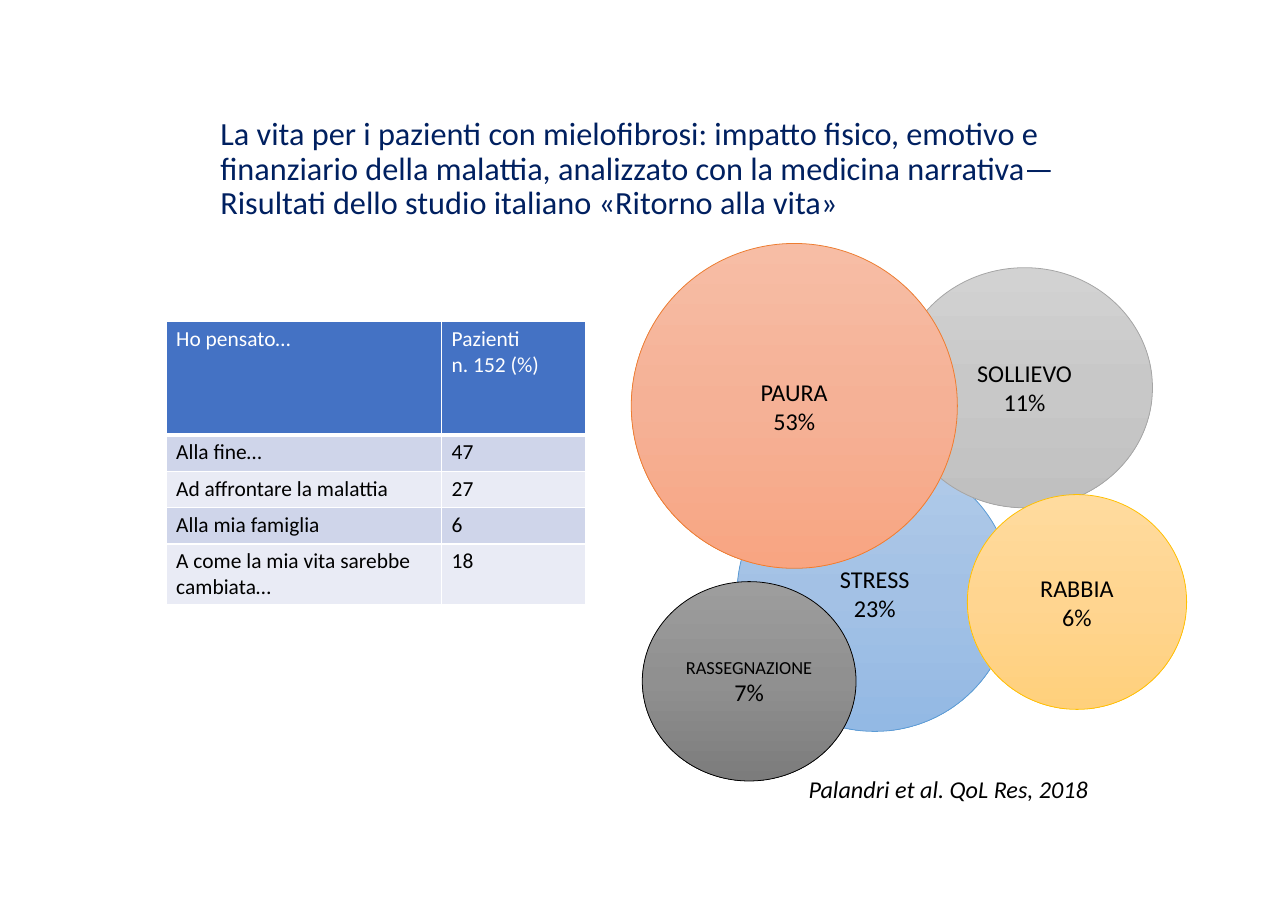
"""Build the slide on thoughts and emotions of patients with myelofibrosis."""
import copy
from typing import Any, NamedTuple

import pptx
import pptx.dml.color
import pptx.enum.shapes
import pptx.enum.text
import pptx.oxml
import pptx.oxml.ns
import pptx.util

Inches = pptx.util.Inches
Pt = pptx.util.Pt
FONT = "Calibri"
BODY_SIZE = 15.8
COLORS = {
    "title": "002060", "text": "000000", "white": "FFFFFF",
    "header": "4472C4", "odd": "CFD5EA", "even": "E9EBF5",
}


class Bubble(NamedTuple):
    """One emotion with its share, place and colours."""

    label: str
    share: str
    box: tuple[float, float, float, float]
    gradient: tuple[str, str, str]
    line: str
    label_size: float = BODY_SIZE


BUBBLES = [
    Bubble("STRESS", "23%", (6.69, 4.14, 2.5, 2.5), ("B1CBE9", "A3C1E5", "93B9E4"), "5B9BD5"),
    Bubble("SOLLIEVO", "11%", (8.14, 2.43, 2.32, 2.18), ("D2D2D2", "C8C8C8", "C0C0C0"), "A5A5A5"),
    Bubble("RABBIA", "6%", (8.78, 4.49, 1.99, 1.95), ("FFDB9E", "FFD590", "FFD07C"), "FFC000"),
    Bubble("PAURA", "53%", (5.73, 2.21, 2.96, 2.95), ("F7BDA5", "F5B196", "F8A582"), "ED7D31"),
    Bubble("RASSEGNAZIONE", "7%", (5.83, 5.28, 1.94, 1.81), ("9D9D9D", "909090", "7C7C7C"),
           "000000", 12),
]
ROWS = [
    ("Ho pensato…", "Pazienti\nn. 152 (%)"),
    ("Alla fine…", "47"),
    ("Ad affrontare la malattia", "27"),
    ("Alla mia famiglia", "6"),
    ("A come la mia vita sarebbe cambiata…", "18"),
]
COL_WIDTHS = (2.5, 1.31)
ROW_HEIGHTS = (1.03, 0.33, 0.33, 0.33, 0.55)


def rgb(value: str) -> pptx.dml.color.RGBColor:
    """Turn a hex string into a colour."""
    return pptx.dml.color.RGBColor.from_string(value)


def style(p: Any, size: float, color: str = COLORS["text"]) -> None:
    """Set the font of a paragraph."""
    p.font.name = FONT
    p.font.size = Pt(size)
    p.font.bold = False
    p.font.color.rgb = rgb(color)


def add_title(slide: Any, text: str) -> None:
    """Place and format the title placeholder."""
    s = slide.shapes.title
    s.left, s.top, s.width, s.height = map(Inches, (1.9, 0.99, 7.89, 1.1))
    tf = s.text_frame
    tf.text = text
    tf.word_wrap = True
    tf.auto_size = pptx.enum.text.MSO_AUTO_SIZE.NONE
    tf.vertical_anchor = pptx.enum.text.MSO_ANCHOR.MIDDLE
    p = tf.paragraphs[0]
    p.alignment = pptx.enum.text.PP_ALIGN.LEFT
    p.line_spacing = 0.9
    style(p, 21.1, COLORS["title"])


def add_citation(slide: Any, text: str) -> None:
    """Add the source line in italics."""
    tf = slide.shapes.add_textbox(*map(Inches, (7.24, 6.98, 2.76, 0.37))).text_frame
    tf.text = text
    tf.word_wrap = False
    tf.auto_size = pptx.enum.text.MSO_AUTO_SIZE.SHAPE_TO_FIT_TEXT
    style(tf.paragraphs[0], BODY_SIZE)
    tf.paragraphs[0].font.italic = True


def add_bubble(slide: Any, bubble: Bubble) -> None:
    """Draw one emotion as a circle with a vertical gradient."""
    s = slide.shapes.add_shape(pptx.enum.shapes.MSO_SHAPE.OVAL, *map(Inches, bubble.box))
    s.shadow.inherit = False
    s.fill.gradient()
    s.fill.gradient_angle = 270
    first = s._element.spPr.find(".//" + pptx.oxml.ns.qn("a:gs"))
    first.addnext(copy.deepcopy(first))
    for i, (stop, color) in enumerate(zip(s.fill.gradient_stops, bubble.gradient)):
        stop.position = i / 2
        stop.color.rgb = rgb(color)
    s.line.color.rgb = rgb(bubble.line)
    s.line.width = Pt(0.5)
    tf = s.text_frame
    tf.text = f"{bubble.label}\n{bubble.share}"
    tf.word_wrap = True
    tf.vertical_anchor = pptx.enum.text.MSO_ANCHOR.MIDDLE
    for p, size in zip(tf.paragraphs, (bubble.label_size, BODY_SIZE)):
        p.alignment = pptx.enum.text.PP_ALIGN.CENTER
        style(p, size)


def add_borders(cell: Any, bottom: float) -> None:
    """Give a cell white borders, with its own width below."""
    for side, width in (("L", 1), ("R", 1), ("T", 1), ("B", bottom)):
        cell._tc.get_or_add_tcPr().append(pptx.oxml.parse_xml(
            f'<a:ln{side} {pptx.oxml.ns.nsdecls("a")} w="{Pt(width)}"><a:solidFill>'
            f'<a:srgbClr val="{COLORS["white"]}"/></a:solidFill></a:ln{side}>'))


def add_thoughts(slide: Any) -> None:
    """Add the table of first thoughts."""
    box = (1.51, 2.92, sum(COL_WIDTHS), sum(ROW_HEIGHTS))
    table = slide.shapes.add_table(len(ROWS), len(COL_WIDTHS), *map(Inches, box)).table
    for col, width in zip(table.columns, COL_WIDTHS):
        col.width = Inches(width)
    for i, (texts, height) in enumerate(zip(ROWS, ROW_HEIGHTS)):
        table.rows[i].height = Inches(height)
        fill = COLORS["header" if i == 0 else "odd" if i % 2 else "even"]
        for j, text in enumerate(texts):
            cell = table.cell(i, j)
            cell.text = text
            cell.margin_left = cell.margin_right = Inches(0.09)
            cell.margin_top = cell.margin_bottom = Inches(0.04)
            add_borders(cell, 1 if i else 3)
            cell.fill.solid()
            cell.fill.fore_color.rgb = rgb(fill)
            for p in cell.text_frame.paragraphs:
                style(p, 14, COLORS["text" if i else "white"])


def main() -> None:
    """Build and save the presentation."""
    prs = pptx.Presentation()
    prs.slide_width, prs.slide_height = Inches(11.69), Inches(8.27)
    slide = prs.slides.add_slide(prs.slide_layouts.get_by_name("Title Only"))
    add_title(slide, "La vita per i pazienti con mielofibrosi: impatto fisico, emotivo e "
                     "finanziario della malattia, analizzato con la medicina narrativa—"
                     "Risultati dello studio italiano «Ritorno alla vita»")
    add_citation(slide, "Palandri et al. QoL Res, 2018")
    add_thoughts(slide)
    for bubble in BUBBLES:
        add_bubble(slide, bubble)
    prs.save("out.pptx")


if __name__ == "__main__":
    main()
